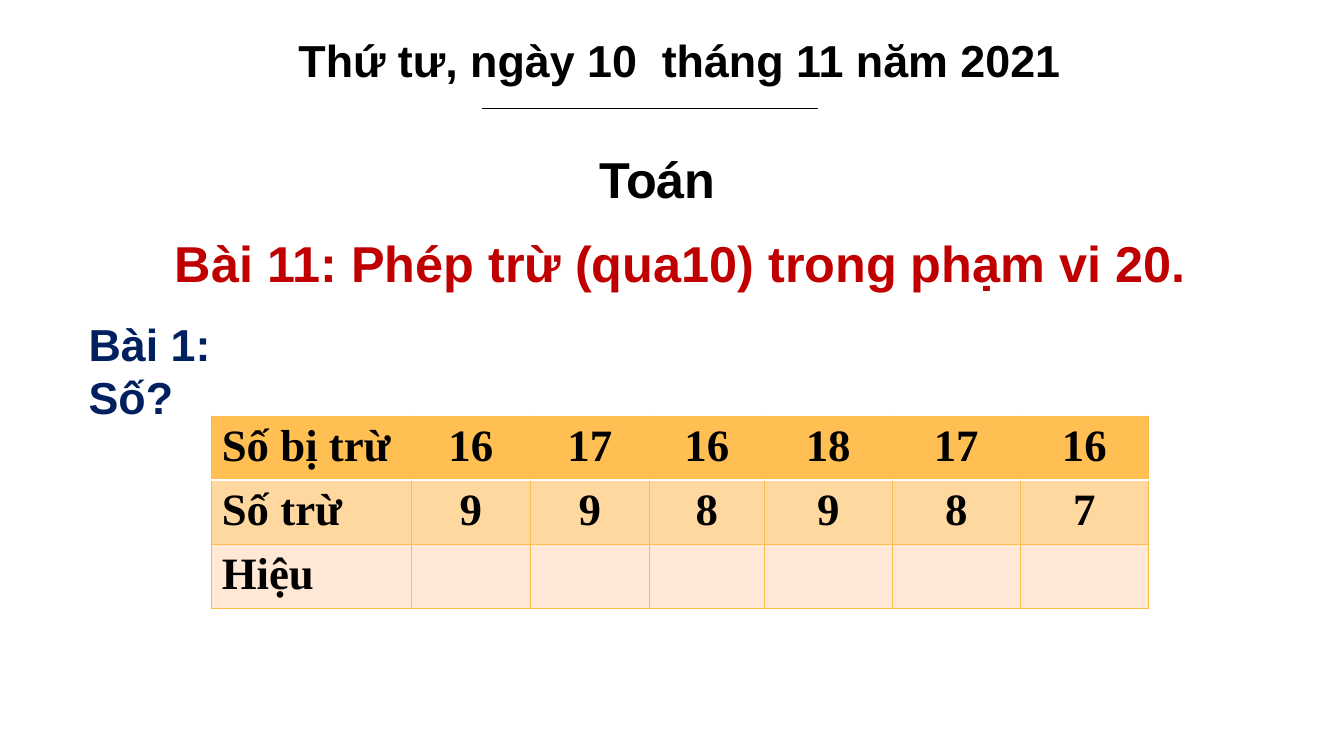
from lxml import etree
from pptx import Presentation
from pptx.dml.color import RGBColor
from pptx.enum.shapes import MSO_CONNECTOR
from pptx.enum.text import MSO_ANCHOR, MSO_AUTO_SIZE, PP_ALIGN
from pptx.oxml import parse_xml
from pptx.oxml.ns import nsdecls, qn
from pptx.util import Inches, Pt

LEFT, CENTER = PP_ALIGN.LEFT, PP_ALIGN.CENTER
TOP = MSO_ANCHOR.TOP
GROW = MSO_AUTO_SIZE.SHAPE_TO_FIT_TEXT
STRAIGHT = MSO_CONNECTOR.STRAIGHT
COLORS = {
    "black": "000000", "white": "FFFFFF", "red": "C00000", "navy": "002060",
    "border": "FEBC4D", "header": "FFBF53", "band": "FFD89F", "pale": "FFE8D5",
}


def set_text(tf, text, size, color, align, font="Arial"):
    tf.text = text
    p = tf.paragraphs[0]
    p.alignment = align
    p.space_before = Pt(0)
    for r in p.runs:
        r.font.name = font
        r.font.size = Pt(size)
        r.font.bold = True
        r.font.color.rgb = RGBColor.from_string(COLORS[color])


def add_border(cell, side, color, width):
    cell._tc.get_or_add_tcPr().append(parse_xml(
        f'<a:ln{side} {nsdecls("a")} w="{Pt(width)}"><a:solidFill>'
        f'<a:srgbClr val="{COLORS[color]}"/></a:solidFill></a:ln{side}>'))


prs = Presentation()
prs.slide_width, prs.slide_height = Inches(13.33), Inches(7.5)
s = prs.slides.add_slide(prs.slide_layouts[5])

title = s.shapes.title
labels = [
    (title, "Bài 11: Phép trừ (qua10) trong phạm vi 20.",
     (-0.04, 2.25, 13.58, 0.71), 36, "red", CENTER),
    (None, "Thứ tư, ngày 10  tháng 11 năm 2021",
     (0.08, 0.28, 13.33, 0.64), 32, "black", CENTER),
    (None, "Toán", (5.44, 1.42, 2.16, 0.71), 36, "black", CENTER),
    (None, "Bài 1: Số?", (0.78, 3.09, 2.28, 0.64), 32, "navy", LEFT),
]
for sp, text, box, size, color, align in labels:
    sp = sp or s.shapes.add_textbox(0, 0, 0, 0)
    sp.left, sp.top, sp.width, sp.height = map(Inches, box)
    tf = sp.text_frame
    tf.word_wrap = True
    tf.auto_size = GROW
    tf.vertical_anchor = TOP
    set_text(tf, text, size, color, align)

rule = s.shapes.add_connector(
    STRAIGHT, Inches(4.78), Inches(1.08), Inches(8.11), Inches(1.08))
rule.line.color.rgb = RGBColor.from_string(COLORS["black"])
rule.line.width = Pt(0.75)
etree.SubElement(rule._element.spPr, qn("a:effectLst"))

rows = [
    ("header", ["Số bị trừ", "16", "17", "16", "18", "17", "16"]),
    ("band", ["Số trừ", "9", "9", "8", "9", "8", "7"]),
    ("pale", ["Hiệu", "", "", "", "", "", ""]),
]
widths = [1.98, 1.18, 1.18, 1.14, 1.27, 1.27, 1.27]
table = s.shapes.add_table(
    len(rows), len(widths), Inches(2.1), Inches(4.13),
    Inches(sum(widths)), Inches(1.9)).table
for column, width in zip(table.columns, widths):
    column.width = Inches(width)
for i, (fill, values) in enumerate(rows):
    for j, value in enumerate(values):
        cell = table.cell(i, j)
        for side in "LRTB":
            if (i, side) in [(0, "B"), (1, "T")]:
                add_border(cell, side, "white", 2)
            else:
                add_border(cell, side, "border", 0.75)
        cell.fill.solid()
        cell.fill.fore_color.rgb = RGBColor.from_string(COLORS[fill])
        set_text(cell.text_frame, value, 32, "black",
                 CENTER if j else LEFT, "Times New Roman")

prs.save("out.pptx")
